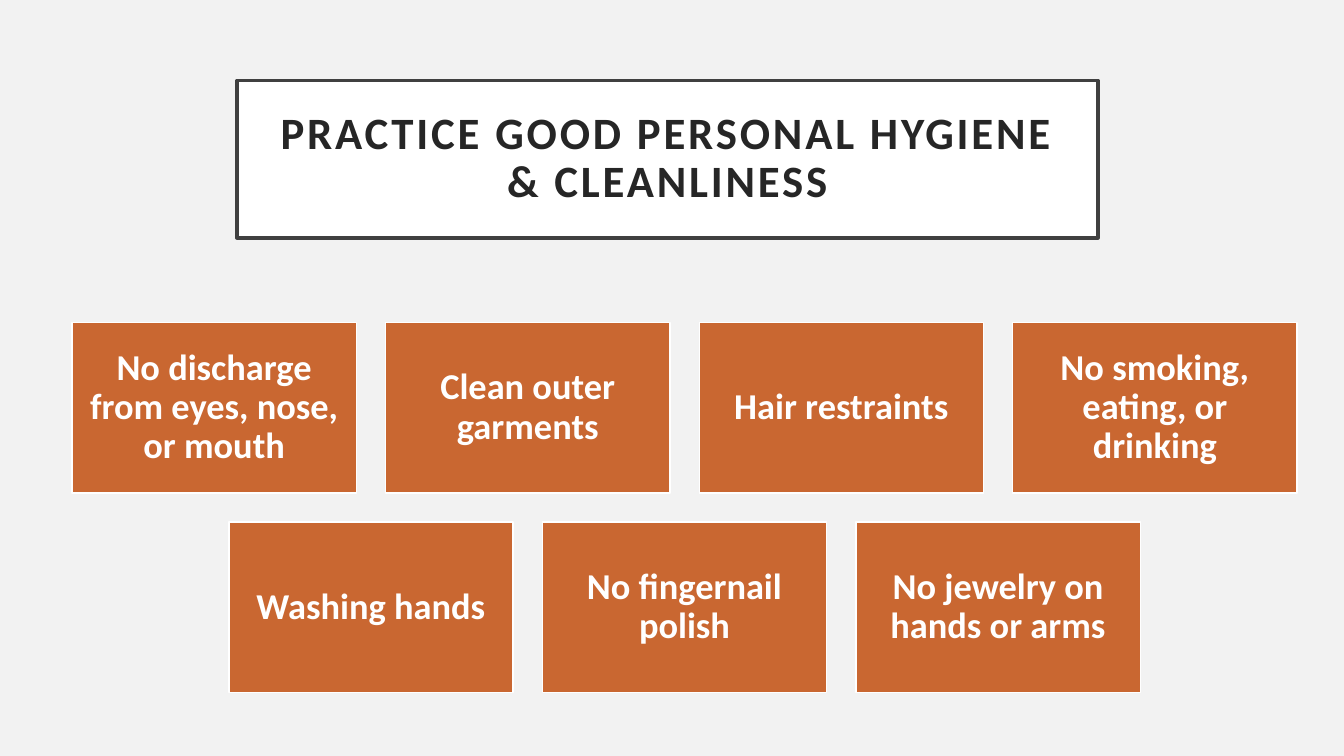
from pptx import Presentation
from pptx.dml.color import RGBColor
from pptx.enum.shapes import MSO_SHAPE
from pptx.enum.text import MSO_ANCHOR, PP_ALIGN
from pptx.util import Inches, Pt

RECTANGLE = MSO_SHAPE.RECTANGLE
MIDDLE = MSO_ANCHOR.MIDDLE
CENTER = PP_ALIGN.CENTER


def color(hex_string):
    return RGBColor.from_string(hex_string)


def add_text_box(text, left, top, width, height, *, fill, line, line_width,
                 font_color, size, inset, spacing=0):
    """Add a filled rectangle with bold centred text; spacing is in points."""
    shape = slide.shapes.add_shape(
        RECTANGLE, Inches(left), Inches(top), Inches(width), Inches(height))
    shape.shadow.inherit = False
    shape.fill.solid()
    shape.fill.fore_color.rgb = color(fill)
    shape.line.color.rgb = color(line)
    shape.line.width = Pt(line_width)

    frame = shape.text_frame
    frame.word_wrap = True
    frame.vertical_anchor = MIDDLE
    frame.margin_left = frame.margin_right = Inches(inset)
    frame.margin_top = frame.margin_bottom = Inches(inset)

    paragraph = frame.paragraphs[0]
    paragraph.alignment = CENTER
    paragraph.line_spacing = 0.9
    run = paragraph.add_run()
    run.text = text
    run.font.name = "Calibri"
    run.font.size = Pt(size)
    run.font.bold = True
    run.font.color.rgb = color(font_color)
    if spacing:
        run.font._element.set("spc", str(spacing * 100))


presentation = Presentation()
presentation.slide_width = Inches(13.33)
presentation.slide_height = Inches(7.5)
slide = presentation.slides.add_slide(presentation.slide_layouts[6])
slide.background.fill.solid()
slide.background.fill.fore_color.rgb = color("F2F2F2")

add_text_box("PRACTICE GOOD PERSONAL HYGIENE & CLEANLINESS",
             2.35, 0.8, 8.54, 1.56, fill="FFFFFF", line="404040",
             line_width=2.5, font_color="262626", size=32, inset=0.2, spacing=2)

# Each row of cards is centred on the same axis.
CARD_WIDTH, CARD_HEIGHT, GAP = 2.82, 1.69, 0.29
ROWS_CENTER, ROWS_TOP = 6.79, 3.2
card_rows = [
    ["No discharge from eyes, nose, or mouth", "Clean outer garments",
     "Hair restraints", "No smoking, eating, or drinking"],
    ["Washing hands", "No fingernail polish", "No jewelry on hands or arms"],
]
for row, cards in enumerate(card_rows):
    row_width = len(cards) * (CARD_WIDTH + GAP) - GAP
    top = ROWS_TOP + row * (CARD_HEIGHT + GAP)
    for column, text in enumerate(cards):
        left = ROWS_CENTER - row_width / 2 + column * (CARD_WIDTH + GAP)
        add_text_box(text, left, top, CARD_WIDTH, CARD_HEIGHT, fill="C96731",
                     line="FFFFFF", line_width=1, font_color="FFFFFF",
                     size=26, inset=0.11)

presentation.save("out.pptx")
